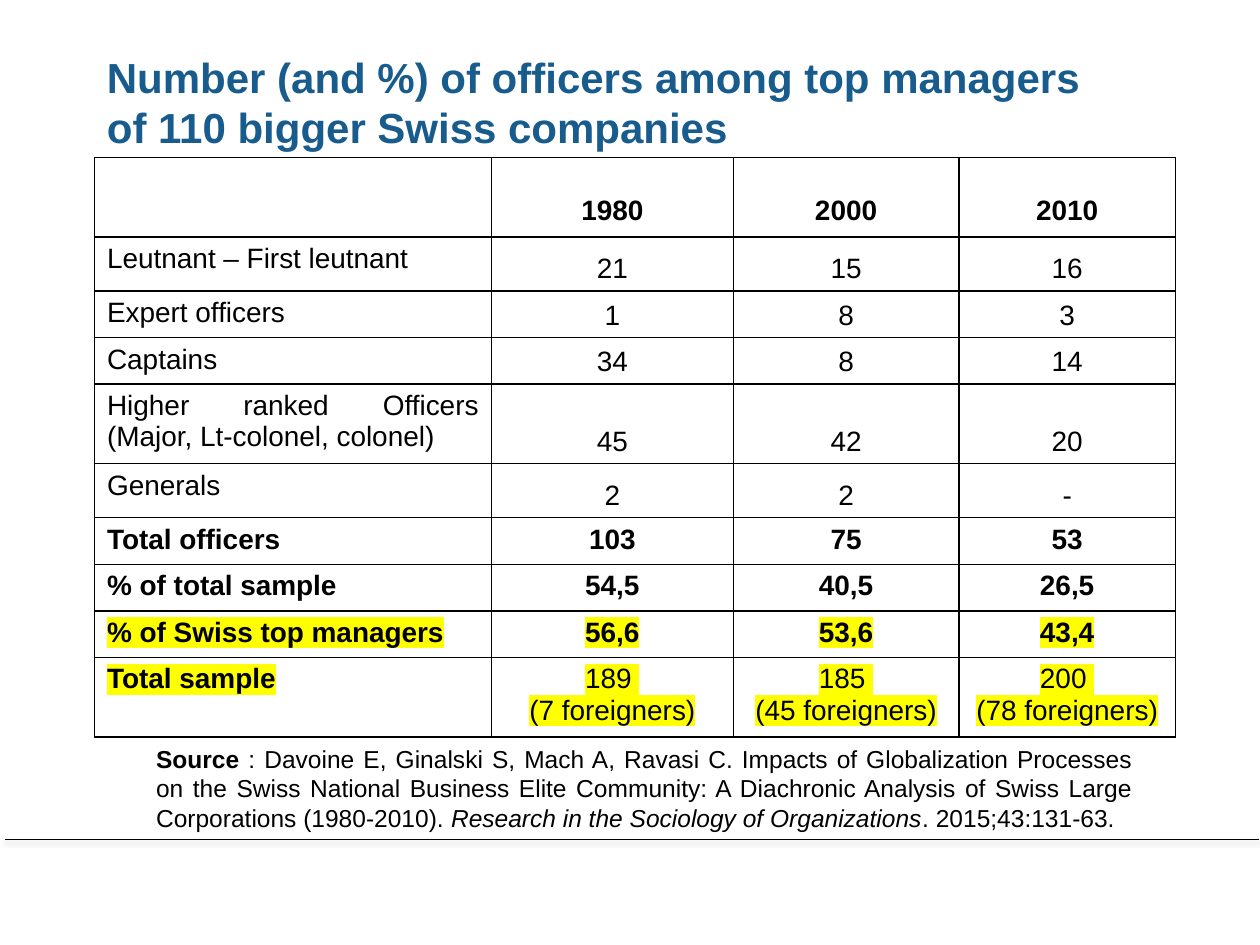
from dataclasses import dataclass

from lxml.etree import SubElement
from pptx import Presentation
from pptx.dml.color import RGBColor
from pptx.enum.shapes import MSO_CONNECTOR as Connector
from pptx.enum.text import MSO_ANCHOR as Anchor, PP_ALIGN as Align
from pptx.oxml import parse_xml
from pptx.oxml.ns import nsdecls, qn
from pptx.util import Inches, Pt


@dataclass(frozen=True)
class Theme:
    """Colours, font and type sizes of the slide."""
    font: str = "Arial"
    ink: str = "000000"
    heading: str = "185B8D"
    marker: str = "FFFF00"
    shadow: str = "808080"
    title_size: int = 24
    table_size: int = 16
    source_size: int = 14


THEME = Theme()
TITLE = ["Number (and %) of officers among top managers",
         "of 110 bigger Swiss companies"]
YEARS = ["1980", "2000", "2010"]
RANKS = [
    (0.43, "Leutnant – First leutnant", ["21", "15", "16"]),
    (0.37, "Expert officers", ["1", "8", "3"]),
    (0.37, "Captains", ["34", "8", "14"]),
    (0.63, "Higher ranked Officers (Major, Lt-colonel, colonel)", ["45", "42", "20"]),
    (0.43, "Generals", ["2", "2", "-"]),
]
TOTALS = [
    ("Total officers", ["103", "75", "53"], None),
    ("% of total sample", ["54,5", "40,5", "26,5"], None),
    ("% of Swiss top managers", ["56,6", "53,6", "43,4"], THEME.marker),
]
SAMPLE = [("189 ", "(7 foreigners)"), ("185 ", "(45 foreigners)"),
          ("200 ", "(78 foreigners)")]
HEADER_HEIGHT = SAMPLE_HEIGHT = 0.63
TOTAL_HEIGHT = 0.37
COLUMNS = [3.15, 1.92, 1.79, 1.72]


def write(paragraph, text, size=THEME.table_size, color=THEME.ink, bold=False,
          italic=False, marker=None, align=None):
    """Append a formatted run to a paragraph."""
    if align is not None:
        paragraph.alignment = align
    run = paragraph.add_run()
    run.text = text
    font = run.font
    font.size, font.bold, font.italic = Pt(size), bold, italic
    font.color.rgb = RGBColor.from_string(color)
    if marker:
        highlight = SubElement(font._element, qn("a:highlight"))
        SubElement(highlight, qn("a:srgbClr"), val=marker)
    font.name = THEME.font


def write_lines(frame, lines, **style):
    """Write each line as its own paragraph of a text frame."""
    for number, line in enumerate(lines):
        paragraph = frame.add_paragraph() if number else frame.paragraphs[0]
        write(paragraph, line, **style)


def add_text_frame(slide, left, top, width, height, wrap=True, anchor=Anchor.TOP):
    """Add a text box and return its text frame."""
    box = slide.shapes.add_textbox(
        Inches(left), Inches(top), Inches(width), Inches(height))
    box.text_frame.word_wrap = wrap
    box.text_frame.vertical_anchor = anchor
    return box.text_frame


def outline(cell):
    """Give a cell thin borders and no fill."""
    properties = cell._tc.get_or_add_tcPr()
    for side in "LRTB":
        properties.append(parse_xml(
            f'<a:ln{side} {nsdecls("a")} w="12700"><a:solidFill>'
            f'<a:srgbClr val="{THEME.ink}"/></a:solidFill></a:ln{side}>'))
    cell.fill.background()


def fill_row(table, row, label, values, anchor=Anchor.TOP, label_bold=False,
             value_bold=False, marker=None):
    """Write a row label and the values for each year."""
    write(table.cell(row, 0).text_frame.paragraphs[0], label,
          bold=label_bold, marker=marker, align=Align.JUSTIFY)
    for column, lines in enumerate(values, 1):
        cell = table.cell(row, column)
        cell.vertical_anchor = anchor
        write_lines(cell.text_frame, lines, bold=value_bold, marker=marker,
                    align=Align.CENTER)


def add_officer_table(slide):
    """Add the table of officers by rank and year."""
    heights = [HEADER_HEIGHT, *(rank[0] for rank in RANKS),
               *[TOTAL_HEIGHT] * len(TOTALS), SAMPLE_HEIGHT]
    table = slide.shapes.add_table(
        len(heights), len(COLUMNS), Inches(0.75), Inches(1.25),
        Inches(sum(COLUMNS)), Inches(sum(heights))).table
    table.first_row = table.horz_banding = False
    for column, width in zip(table.columns, COLUMNS):
        column.width = Inches(width)
    for row, height in zip(table.rows, heights):
        row.height = Inches(height)
    for cell in table.iter_cells():
        outline(cell)

    for column, year in enumerate(YEARS, 1):
        header = table.cell(0, column)
        header.margin_top = Inches(0.3)
        write(header.text_frame.paragraphs[0], year, bold=True, align=Align.CENTER)
    for row, (_, label, counts) in enumerate(RANKS, 1):
        fill_row(table, row, label, [[count] for count in counts], Anchor.BOTTOM)
    for row, (label, totals, marker) in enumerate(TOTALS, 1 + len(RANKS)):
        fill_row(table, row, label, [[total] for total in totals],
                 label_bold=True, value_bold=True, marker=marker)
    fill_row(table, len(heights) - 1, "Total sample", SAMPLE,
             label_bold=True, marker=THEME.marker)


def add_footer_rule(slide):
    """Add the footer line with its soft shadow."""
    rule = slide.shapes.add_connector(
        Connector.STRAIGHT, Inches(0.04), Inches(6.66), Inches(9.99), Inches(6.66))
    rule.line.width = Pt(0.25)
    rule.line.color.rgb = RGBColor.from_string(THEME.ink)
    rule._element.spPr.append(parse_xml(
        f'<a:effectLst {nsdecls("a")}><a:outerShdw blurRad="{Pt(3.1)}" '
        f'dist="{Pt(1.6)}" dir="5400000" rotWithShape="0">'
        f'<a:srgbClr val="{THEME.shadow}"><a:alpha val="38000"/></a:srgbClr>'
        '</a:outerShdw></a:effectLst>'))


def add_source(slide):
    """Add the justified reference under the table."""
    frame = add_text_frame(slide, 1.14, 5.85, 7.95, 0.81, anchor=Anchor.MIDDLE)
    reference = frame.paragraphs[0]
    reference.alignment = Align.JUSTIFY
    size = THEME.source_size
    write(reference, "Source", size=size, bold=True)
    write(reference, " : Davoine E, Ginalski S, Mach A, Ravasi C. Impacts of "
          "Globalization Processes on the Swiss National Business Elite Community: "
          "A Diachronic Analysis of Swiss Large Corporations (1980-2010). ", size=size)
    write(reference, "Research in the Sociology of Organizations", size=size, italic=True)
    write(reference, ". 2015;43:131-63.", size=size)


def main():
    """Build and save the slide."""
    deck = Presentation()
    deck.slide_width, deck.slide_height = Inches(10), Inches(7.5)
    slide = deck.slides.add_slide(deck.slide_layouts[6])
    add_footer_rule(slide)
    add_officer_table(slide)
    add_source(slide)
    title = add_text_frame(slide, 0.75, 0.36, 8.09, 0.91, wrap=False)
    write_lines(title, TITLE, size=THEME.title_size, color=THEME.heading, bold=True)
    deck.save("out.pptx")


if __name__ == "__main__":
    main()
